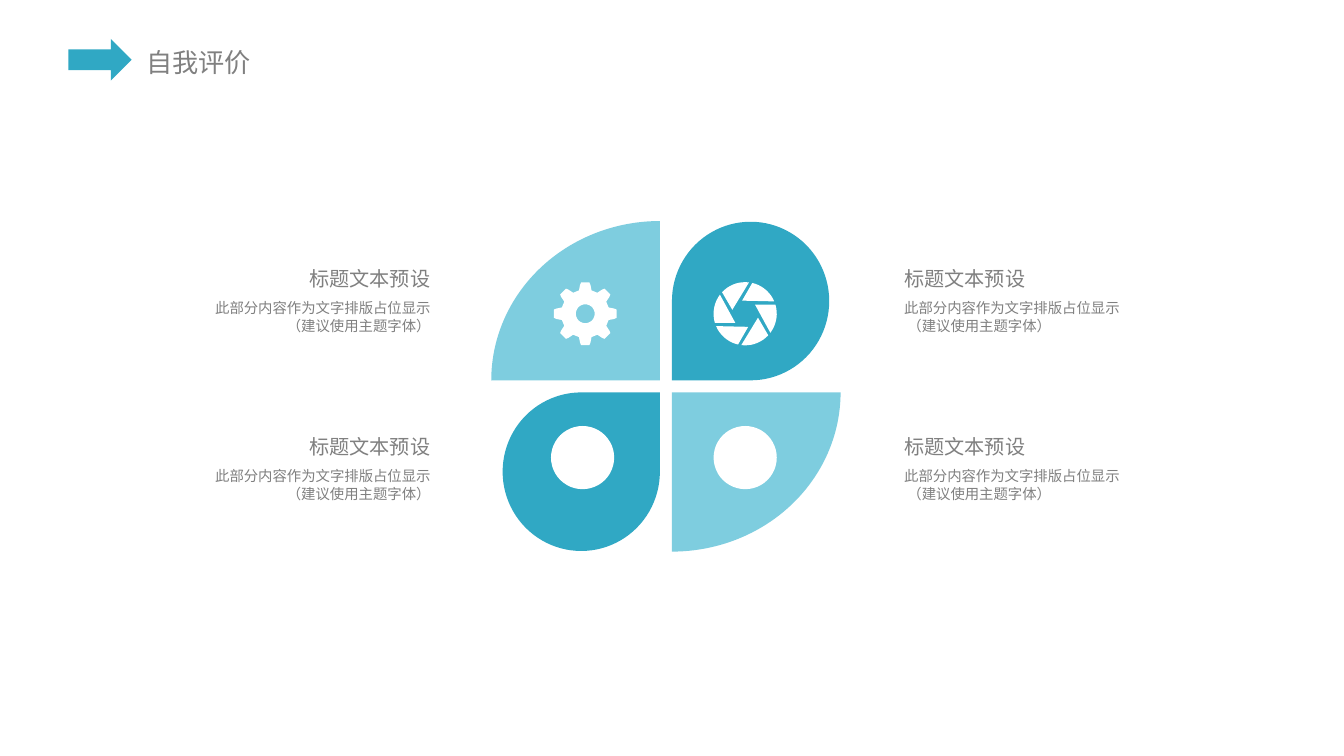
from dataclasses import dataclass
from itertools import product
from math import cos, radians, sin

from pptx import Presentation
from pptx.dml.color import RGBColor
from pptx.enum.shapes import MSO_SHAPE as Preset
from pptx.enum.text import MSO_ANCHOR as Anchor, MSO_AUTO_SIZE as AutoSize, PP_ALIGN as Align
from pptx.oxml.ns import qn
from pptx.util import Inches, Pt


@dataclass(frozen=True)
class Theme:
    font: str = "Noto Sans CJK SC"
    grey: RGBColor = RGBColor(0x80, 0x80, 0x80)
    teal: RGBColor = RGBColor(0x30, 0xA8, 0xC4)
    light_teal: RGBColor = RGBColor(0x7E, 0xCD, 0xDF)
    white: RGBColor = RGBColor(0xFF, 0xFF, 0xFF)
    title_size: float = 14
    heading_size: float = 10.8
    body_size: float = 7.75


THEME = Theme()
ICON_RADIUS = 0.235


# Shared helpers
def paint(shape, color):
    shape.shadow.inherit = False
    shape.fill.solid()
    shape.fill.fore_color.rgb = color
    shape.line.fill.background()


def add_preset(slide, preset, box, color):
    shape = slide.shapes.add_shape(preset, *map(Inches, box))
    paint(shape, color)
    return shape


def flip(shape, *axes):
    for axis in axes:
        shape._element.spPr.xfrm.set(f"flip{axis}", "1")


def centred(x, y, width, height):
    return x - width / 2, y - height / 2, width, height


def write(holder, lines, size, align=Align.LEFT, wrap=False, inset=0.1, anchor=Anchor.TOP):
    frame = holder.text_frame
    frame.auto_size = AutoSize.NONE
    frame.word_wrap = wrap
    frame.vertical_anchor = anchor
    frame.margin_left = frame.margin_right = Inches(inset)
    frame.margin_top = frame.margin_bottom = Inches(0.05)
    paragraph = frame.paragraphs[0]
    paragraph.alignment = align
    paragraph.line_spacing = 1.0
    paragraph.space_before = Pt(0)
    for index, line in enumerate(lines):
        if index:
            paragraph.add_line_break()
        run = paragraph.add_run()
        run.text = line
        run.font.size = Pt(size)
        run.font.name = THEME.font
        run.font.color.rgb = THEME.grey
        east_asian = run.font._element.makeelement(qn("a:ea"), {"typeface": THEME.font})
        run.font._element.find(qn("a:latin")).addnext(east_asian)


# Icons
def polar(x, y, angle, radius):
    """Point at a clockwise angle from twelve o'clock."""
    turn = radians(angle)
    return Inches(x + radius * sin(turn)), Inches(y - radius * cos(turn))


def add_outline(slide, contours, color):
    first, *others = contours
    builder = slide.shapes.build_freeform(*first[0], scale=1.0)
    builder.add_line_segments(first[1:], close=True)
    for contour in others:
        builder.move_to(*contour[0])
        builder.add_line_segments(contour[1:], close=True)
    paint(builder.convert_to_shape(), color)


def add_gear(slide, x, y):
    tooth = [(-15, 0.18), (-10, 0.22), (-7.5, ICON_RADIUS),
             (7.5, ICON_RADIUS), (10, 0.22), (15, 0.18)]
    rim = [polar(x, y, turn + offset, radius)
           for turn in range(0, 360, 45) for offset, radius in tooth]
    hole = [polar(x, y, turn, 0.07) for turn in range(0, 360, 10)]
    add_outline(slide, [rim, hole], THEME.white)


def add_aperture(slide, x, y):
    blades = []
    for turn in range(0, 360, 60):
        arc = [polar(x, y, turn + step, ICON_RADIUS) for step in range(-47, 8, 6)]
        blades.append(arc + [polar(x, y, turn - 73, 0.1)])
    add_outline(slide, blades, THEME.white)


def add_disc(slide, x, y):
    add_preset(slide, Preset.OVAL, centred(x, y, 2 * ICON_RADIUS, 2 * ICON_RADIUS), THEME.white)


# Regions
def add_header(slide, left, top):
    title = slide.shapes.title
    title.left, title.top, title.width, title.height = map(
        Inches, (left + 0.47, top, 1, 0.34))
    write(title, ["自我评价"], THEME.title_size, inset=0.11, anchor=Anchor.MIDDLE)
    add_preset(slide, Preset.RIGHT_ARROW, (left, top, 0.47, 0.31), THEME.teal)


def add_petals(slide, left, top, width, height):
    x, y = left + width / 2, top + height / 2
    for side in (-1, 1):
        # Quarter discs: upper left and lower right
        quarter = add_preset(slide, Preset.PIE, centred(
            x + side * 0.045, y + side * 0.045, 2.51, 2.37), THEME.light_teal)
        quarter.adjustments[0], quarter.adjustments[1] = 108, 162
        if side > 0:
            flip(quarter, "H", "V")

        # Teardrops: lower left and upper right, pointing to the middle
        drop = add_preset(slide, Preset.TEAR, centred(
            x + side * 0.63, y - side * 0.635, 1.18, 1.17), THEME.teal)
        drop.rotation = 270
        flip(drop, "H" if side > 0 else "V")

    add_gear(slide, x - 0.6, y - 0.54)
    add_aperture(slide, x + 0.59, y - 0.54)
    add_disc(slide, x - 0.62, y + 0.53)
    add_disc(slide, x + 0.59, y + 0.53)


def add_caption(slide, left, top, width, align):
    heading_width = 1.03
    heading_left = left + width - heading_width if align == Align.RIGHT else left
    heading = slide.shapes.add_textbox(
        *map(Inches, (heading_left, top, heading_width, 0.25)))
    write(heading, ["标题文本预设"], THEME.heading_size, align)
    body = slide.shapes.add_textbox(*map(Inches, (left, top + 0.25, width, 0.46)))
    write(body, ["此部分内容作为文字排版占位显示", " （建议使用主题字体）"],
          THEME.body_size, align, wrap=True)


def main():
    deck = Presentation()
    deck.slide_width = Inches(10)
    deck.slide_height = deck.slide_width * 9 // 16
    slide = deck.slides.add_slide(deck.slide_layouts.get_by_name("Title Only"))
    add_header(slide, 0.51, 0.29)
    add_petals(slide, 3.65, 1.64, 2.61, 2.47)
    columns = [(6.63, Align.LEFT), (1.27, Align.RIGHT)]
    for (left, align), top in product(columns, (1.93, 3.18)):
        add_caption(slide, left, top, 2.03, align)
    deck.save("out.pptx")


if __name__ == "__main__":
    main()
